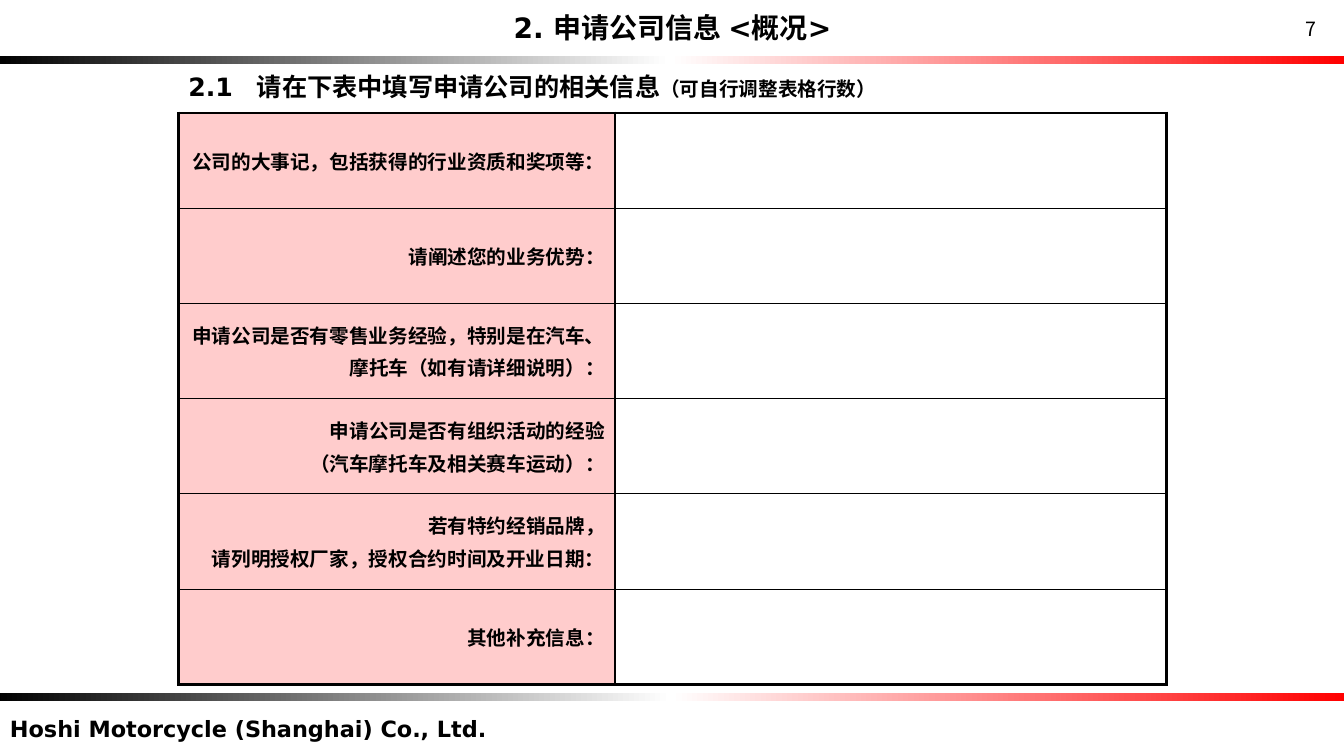
from copy import deepcopy
from dataclasses import dataclass

from lxml import etree
from pptx import Presentation
from pptx import util as u
from pptx.dml.color import RGBColor
from pptx.enum import lang, shapes, text
from pptx.oxml import ns


@dataclass(frozen=True)
class Theme:
    ink: str = "000000"
    paper: str = "FFFFFF"
    accent: str = "FF0000"
    label: str = "FFCCCC"
    latin: str = "DejaVu Sans"
    asian: str = "Noto Sans CJK JP"
    title: int = 20
    heading: int = 18
    footer: int = 16
    body: int = 14
    outer_line: float = 2.25
    inner_line: float = 1


class FormSlide:
    def __init__(self, prs, theme):
        self.theme = theme
        self.slide = prs.slides.add_slide(prs.slide_layouts[6])

    def run(self, p, words, size, bold=True, latin=None):
        r = p.add_run()
        r.text = words
        f = r.font
        f.size, f.bold = u.Pt(size), bold
        f.name = latin or self.theme.latin
        f.color.rgb = RGBColor.from_string(self.theme.ink)
        f.language_id = lang.MSO_LANGUAGE_ID.SIMPLIFIED_CHINESE
        ea = etree.Element(ns.qn("a:ea"), typeface=self.theme.asian)
        r.font._element.find(ns.qn("a:latin")).addnext(ea)

    def text(self, box, runs, align=text.PP_ALIGN.LEFT, anchor=text.MSO_ANCHOR.TOP, tab=None, **style):
        tf = self.slide.shapes.add_textbox(*map(u.Inches, box)).text_frame
        tf.word_wrap = True
        tf.vertical_anchor = anchor
        p = tf.paragraphs[0]
        p.alignment = align
        if tab:
            tabs = etree.SubElement(p._p.get_or_add_pPr(), ns.qn("a:tabLst"))
            etree.SubElement(tabs, ns.qn("a:tab"), pos=str(u.Inches(tab)), algn="l")
        for words, size in runs:
            self.run(p, words, size, **style)

    def bar(self, left, top):
        sp = self.slide.shapes.add_shape(
            shapes.MSO_SHAPE.RECTANGLE, *map(u.Inches, (left, top, 13.39, 0.08)))
        sp.shadow.inherit = False
        sp.line.fill.background()
        sp.fill.gradient()
        sp.fill.gradient_angle = 0
        stops = sp._element.spPr.find(".//" + ns.qn("a:gsLst"))
        stops.append(deepcopy(stops[0]))
        colors = (self.theme.ink, self.theme.paper, self.theme.accent)
        for i, (stop, color) in enumerate(zip(sp.fill.gradient_stops, colors)):
            stop.position = i / 2
            stop.color.rgb = RGBColor.from_string(color)

    def border(self, cell, side, width):
        ln = etree.SubElement(cell._tc.get_or_add_tcPr(), ns.qn("a:ln" + side), w=str(u.Pt(width)))
        fill = etree.SubElement(ln, ns.qn("a:solidFill"))
        etree.SubElement(fill, ns.qn("a:srgbClr"), val=self.theme.ink)

    def table(self, box, widths, labels):
        t = self.theme
        rows, cols = len(labels), len(widths)
        table = self.slide.shapes.add_table(rows, cols, *map(u.Inches, box)).table
        table.first_row = table.horz_banding = False
        for col, width in zip(table.columns, widths):
            col.width = u.Inches(width)
        for i, lines in enumerate(labels):
            table.rows[i].height = u.Inches(box[3] / rows)
            for j in range(cols):
                cell = table.cell(i, j)
                edges = {"L": j == 0, "R": j == cols - 1, "T": i == 0, "B": i == rows - 1}
                for side, outer in edges.items():
                    self.border(cell, side, t.outer_line if outer else t.inner_line)
                cell.fill.background()
            self.label(table.cell(i, 0), lines)

    def label(self, cell, lines):
        cell.fill.solid()
        cell.fill.fore_color.rgb = RGBColor.from_string(self.theme.label)
        cell.vertical_anchor = text.MSO_ANCHOR.MIDDLE
        tf = cell.text_frame
        for i, line in enumerate(lines):
            p = tf.add_paragraph() if i else tf.paragraphs[0]
            p.alignment = text.PP_ALIGN.RIGHT
            if i:
                p.space_before = u.Pt(0.2 * self.theme.body)
            self.run(p, line, self.theme.body)


LABELS = [
    ["公司的大事记，包括获得的行业资质和奖项等："],
    ["请阐述您的业务优势："],
    ["申请公司是否有零售业务经验，特别是在汽车、", "摩托车（如有请详细说明）："],
    ["申请公司是否有组织活动的经验", "（汽车摩托车及相关赛车运动）："],
    ["若有特约经销品牌，", "请列明授权厂家，授权合约时间及开业日期："],
    ["其他补充信息："],
]


def main():
    prs = Presentation()
    prs.slide_width, prs.slide_height = u.Inches(13.33), u.Inches(7.5)
    t = Theme()
    s = FormSlide(prs, t)
    center = text.PP_ALIGN.CENTER
    s.bar(-0.05, 0.56)
    s.bar(-0.04, 6.87)
    s.text((0, 7.05, 7.39, 0.37), [("Hoshi Motorcycle (Shanghai) Co., Ltd.", t.footer)])
    s.text((12.67, 0.12, 0.66, 0.34), [("7", t.body)], center, bold=False, latin=t.asian)
    s.text((4.38, 0.11, 4.58, 0.33), [("2. 申请公司信息 <概况>", t.title)],
           center, text.MSO_ANCHOR.MIDDLE)
    s.text((1.77, 0.66, 7.3, 0.4),
           [("2.1\t请在下表中填写申请公司的相关信息", t.heading), ("（可自行调整表格行数）", t.body)],
           tab=0.68)
    s.table((1.77, 1.12, 9.8, 5.67), (4.33, 5.47), LABELS)
    prs.save("out.pptx")


if __name__ == "__main__":
    main()
